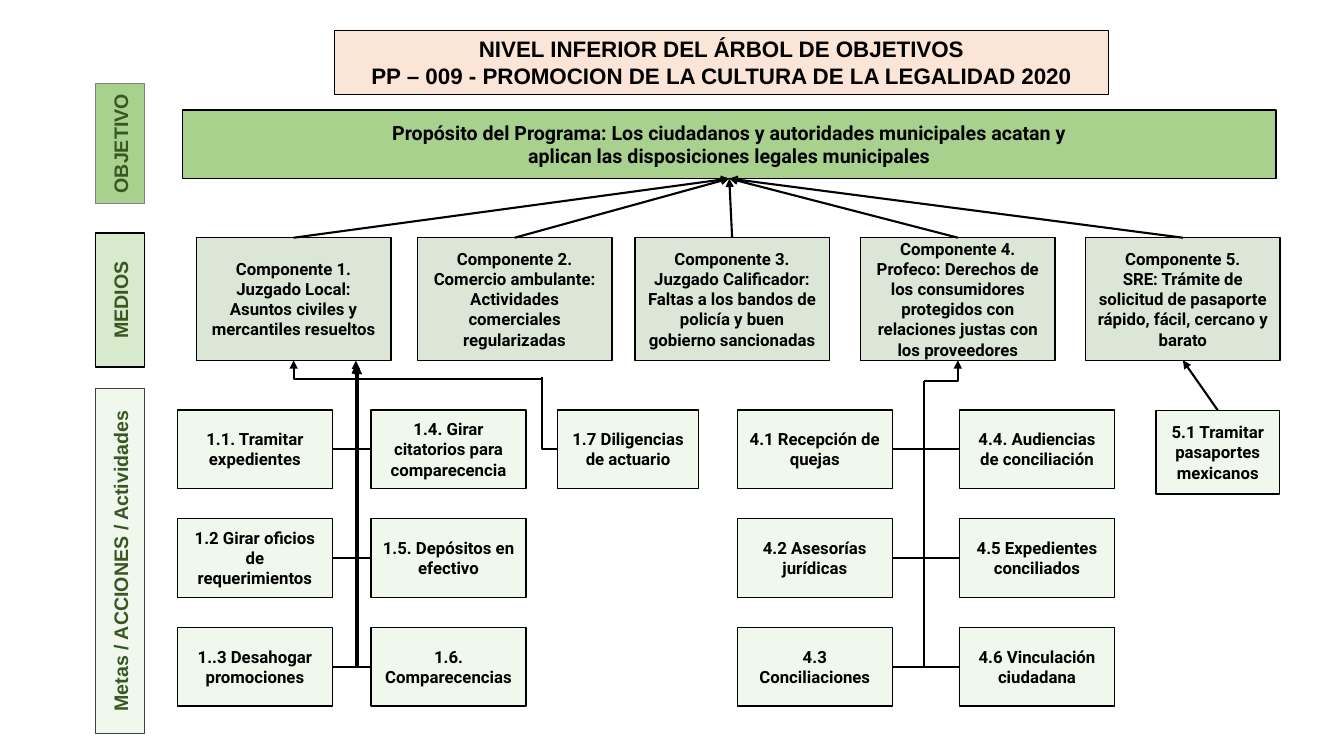
import pptx
import pptx.dml.color
import pptx.enum.shapes
import pptx.enum.text
import pptx.oxml.ns
import pptx.util
import lxml.etree

Cm = pptx.util.Cm
RGBColor = pptx.dml.color.RGBColor
SHAPE = pptx.enum.shapes.MSO_SHAPE
CONNECTOR = pptx.enum.shapes.MSO_CONNECTOR
ANCHOR = pptx.enum.text.MSO_ANCHOR
qn = pptx.oxml.ns.qn

BLACK = RGBColor(0x00, 0x00, 0x00)
GRAY = RGBColor(0x80, 0x80, 0x80)
DARK_GRAY = RGBColor(0x40, 0x40, 0x40)
PEACH = RGBColor(0xFB, 0xE5, 0xD6)
GREEN = RGBColor(0xA9, 0xD1, 0x8E)
PALE_GREEN = RGBColor(0xC5, 0xE0, 0xB4)
DEEP_GREEN = RGBColor(0x54, 0x82, 0x35)
TEXT_GREEN = RGBColor(0x38, 0x57, 0x23)

TOP, LEFT, BOTTOM, RIGHT = range(4)
ROW_PITCH = 2.74

COMPONENTS = [
    (4.95, ["Componente 1. Juzgado Local: Asuntos civiles y mercantiles resueltos"]),
    (10.52, ["Componente 2. Comercio ambulante: Actividades comerciales regularizadas"]),
    (16, ["Componente 3. Juzgado Calificador: Faltas a los bandos de policía y buen "
          "gobierno sancionadas"]),
    (21.69, ["Componente 4. Profeco: Derechos de los consumidores protegidos con "
             "relaciones justas con los proveedores"]),
    (27.36, ["Componente 5.",
             "SRE: Trámite de solicitud de pasaporte rápido, fácil, cercano y barato"]),
]
COURT_LEFT = ["1.1. Tramitar expedientes", "1.2 Girar oficios de requerimientos",
              "1..3 Desahogar promociones"]
COURT_RIGHT = ["1.4. Girar citatorios para comparecencia", "1.5. Depósitos en efectivo",
               "1.6. Comparecencias"]
CONSUMER_LEFT = ["4.1 Recepción de quejas", "4.2 Asesorías jurídicas", "4.3 Conciliaciones"]
CONSUMER_RIGHT = ["4.4. Audiencias de conciliación", "4.5 Expedientes conciliados",
                  "4.6 Vinculación ciudadana"]


def add_box(slide, box, lines, fill, size=12, font="Roboto", color=BLACK, alpha=100,
            border=BLACK, border_width=1, kind=SHAPE.FLOWCHART_PROCESS):
    """Draw a bordered box with centred bold paragraphs."""
    shape = slide.shapes.add_shape(kind, *map(Cm, box))
    shape.shadow.inherit = False
    shape.fill.solid()
    shape.fill.fore_color.rgb = fill
    if alpha < 100:
        fill_color = shape.element.spPr.find(qn("a:solidFill"))[0]
        lxml.etree.SubElement(fill_color, qn("a:alpha"), val=str(alpha * 1000))
    shape.line.color.rgb = border
    shape.line.width = pptx.util.Pt(border_width)
    frame = shape.text_frame
    frame.word_wrap = True
    frame.vertical_anchor = ANCHOR.MIDDLE
    for index, line in enumerate(lines):
        paragraph = frame.paragraphs[0] if index == 0 else frame.add_paragraph()
        paragraph.alignment = pptx.enum.text.PP_ALIGN.CENTER
        run = paragraph.add_run()
        run.text = line
        run.font.name = font
        run.font.size = pptx.util.Pt(size)
        run.font.bold = True
        run.font.color.rgb = color
    return shape


def add_link(slide, start, end, kind=CONNECTOR.STRAIGHT, arrow=True):
    """Join two ends, each a point in centimetres or a shape with its side."""
    points = [(0, 0) if hasattr(place[0], "shape_id") else place for place in (start, end)]
    connector = slide.shapes.add_connector(kind, *(Cm(n) for point in points for n in point))
    if hasattr(start[0], "shape_id"):
        connector.begin_connect(*start)
    if hasattr(end[0], "shape_id"):
        connector.end_connect(*end)
    connector.line.color.rgb = BLACK
    connector.line.width = pptx.util.Pt(1.5)
    properties = connector.element.spPr
    if arrow:
        lxml.etree.SubElement(properties.find(qn("a:ln")), qn("a:tailEnd"), type="triangle")
    lxml.etree.SubElement(properties, qn("a:effectLst"))
    return connector


def add_elbow(slide, start, end, arrow=True):
    """Draw a single-bend connector that leaves sideways and then turns up."""
    connector = add_link(slide, start, end, CONNECTOR.ELBOW, arrow)
    properties = connector.element.spPr
    properties.find(qn("a:prstGeom")).set("prst", "bentConnector2")
    transform = properties.find(qn("a:xfrm"))
    if transform.get("flipH") and transform.get("flipV"):
        del transform.attrib["flipH"], transform.attrib["flipV"]
        transform.set("rot", "10800000")


def add_side_label(slide, box, text, fill, alpha, border):
    """Draw a level label that reads upwards inside the given box."""
    left, top, width, height = box
    shift = (height - width) / 2
    label = add_box(slide, (left - shift, top + shift, height, width), [text], fill, 14,
                    "Arial", TEXT_GREEN, alpha, border)
    label.rotation = 270


def add_header(slide, box):
    """Draw the title box."""
    title = add_box(slide, box, ["NIVEL INFERIOR DEL ÁRBOL DE OBJETIVOS",
                                 "PP – 009 - PROMOCION DE LA CULTURA DE LA LEGALIDAD 2020"],
                    PEACH, 16, "Arial", border_width=0.75, kind=SHAPE.RECTANGLE)
    title.text_frame.vertical_anchor = ANCHOR.TOP


def add_components(slide, top, width, height, purpose):
    """Draw the row of components, each pointing at the purpose."""
    components = []
    for left, lines in COMPONENTS:
        component = add_box(slide, (left, top, width, height), lines, DEEP_GREEN, alpha=20)
        add_link(slide, (component, TOP), (purpose, BOTTOM))
        components.append(component)
    return components


def add_activity(slide, box, text):
    """Draw one activity box."""
    return add_box(slide, box, [text], PALE_GREEN, alpha=25)


def add_activity_column(slide, box, texts, side, trunk_ends, arrow):
    """Stack activities from the first box down and link each to its trunk."""
    left, top, width, height = box
    for row, (text, trunk_end) in enumerate(zip(texts, trunk_ends)):
        activity = add_activity(slide, (left, top + row * ROW_PITCH, width, height), text)
        add_elbow(slide, (activity, side), trunk_end, arrow)


def add_court_activities(slide, box, component):
    """Draw the activities of component 1."""
    left, top, width, height = box
    add_activity_column(slide, box, COURT_LEFT, RIGHT,
                        [(8.97, 9.09), (9.02, 9.22), (9.02, 9.22)], True)
    add_activity_column(slide, (left + 4.88, top, width, height), COURT_RIGHT, LEFT,
                        [(8.97, 9.2)] * 3, True)
    errand = add_activity(slide, (left + 9.58, top, 3.56, height), "1.7 Diligencias de actuario")
    add_elbow(slide, (errand, LEFT), (13.67, 9.5), False)
    add_elbow(slide, (13.65, 9.55), (component, BOTTOM))


def add_consumer_activities(slide, box, component):
    """Draw the activities of component 4."""
    left, top, width, height = box
    trunk_top = (23.29, 9.6)
    add_activity_column(slide, box, CONSUMER_LEFT, RIGHT, [trunk_top] * 3, False)
    add_activity_column(slide, (left + 5.6, top, width, height), CONSUMER_RIGHT, LEFT,
                        [trunk_top] * 3, False)
    add_elbow(slide, trunk_top, (component, BOTTOM))


def add_passport_activity(slide, box, component):
    """Draw the only activity of component 5."""
    passport = add_activity(slide, box, "5.1 Tramitar pasaportes mexicanos")
    add_link(slide, (passport, TOP), (component, BOTTOM))


def main():
    """Build the objective tree slide and save it."""
    presentation = pptx.Presentation()
    presentation.slide_width = Cm(33.87)
    presentation.slide_height = Cm(19.05)
    slide = presentation.slides.add_slide(presentation.slide_layouts[6])
    add_side_label(slide, (2.41, 2.11, 1.24, 3.02), "OBJETIVO", GREEN, 100, GRAY)
    add_side_label(slide, (2.41, 5.87, 1.24, 3.38), "MEDIOS", GREEN, 45, BLACK)
    add_side_label(slide, (2.41, 9.79, 1.24, 8.69), "Metas / ACCIONES / Actividades",
                   PALE_GREEN, 25, DARK_GRAY)
    add_header(slide, (8.43, 0.76, 19.51, 1.63))
    purpose = add_box(slide, (4.6, 2.77, 27.56, 1.73),
                      ["Propósito del Programa: Los ciudadanos y autoridades municipales acatan y",
                       "aplican las disposiciones legales municipales"], GREEN, 14)
    components = add_components(slide, 5.99, 4.9, 3.09, purpose)
    add_court_activities(slide, (4.47, 10.33, 3.91, 1.98), components[0])
    add_consumer_activities(slide, (18.58, 10.33, 3.91, 1.98), components[3])
    add_passport_activity(slide, (29.13, 10.34, 3.12, 2.11), components[4])
    presentation.save("out.pptx")


if __name__ == "__main__":
    main()
